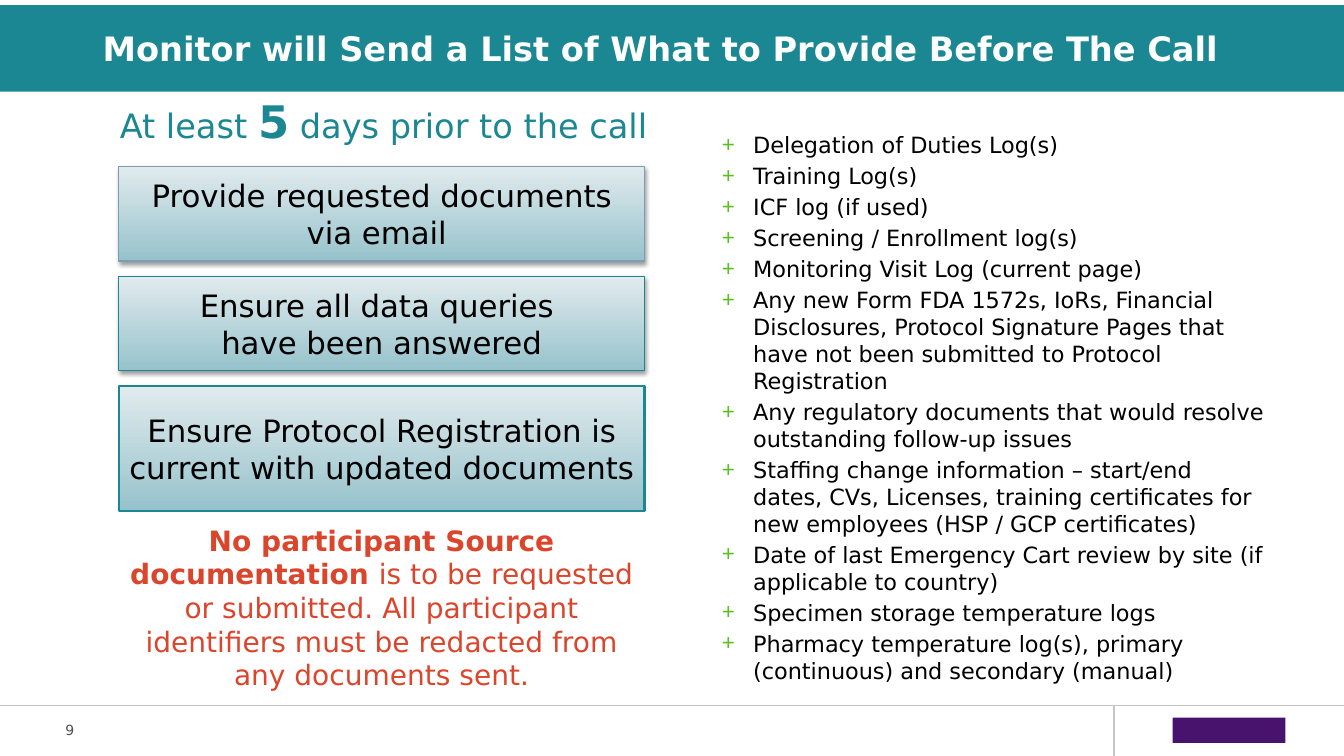
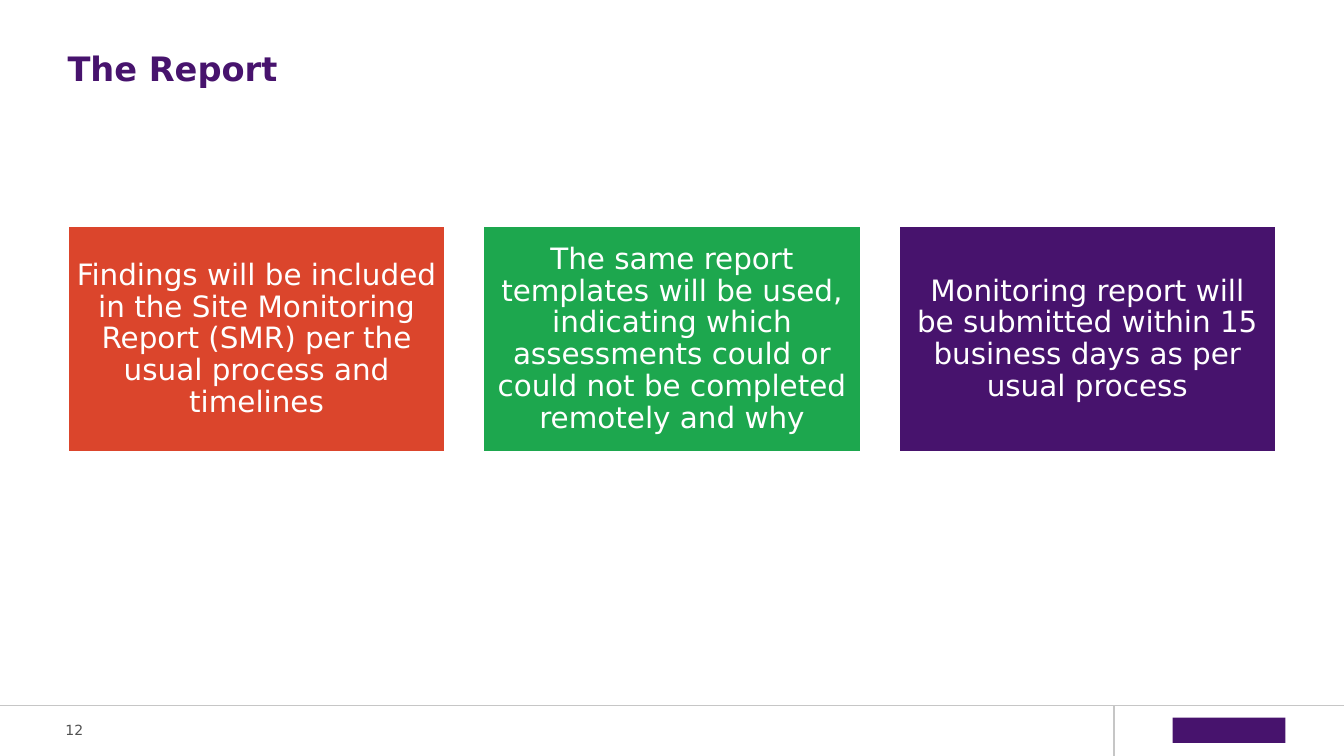
from dataclasses import dataclass

from lxml.etree import SubElement
from pptx import Presentation
from pptx.dml.color import RGBColor
from pptx.enum.shapes import MSO_CONNECTOR, MSO_SHAPE
from pptx.enum.text import MSO_ANCHOR, MSO_AUTO_SIZE, PP_ALIGN
from pptx.oxml.ns import qn
from pptx.util import Inches, Pt


@dataclass(frozen=True)
class Theme:
    font: str = "DejaVu Sans"
    teal: str = "1A8793"
    purple: str = "47136D"
    red: str = "DB452C"
    green: str = "1DA74E"
    bullet: str = "5BBF21"
    steel: str = "7C9EB3"
    dark: str = "96C2CB"
    light: str = "E1EBEE"
    rule: str = "C6C6C6"
    gray: str = "515151"
    black: str = "000000"
    white: str = "FFFFFF"
    title: int = 24
    big: int = 32
    step: int = 22
    card: int = 21
    note: int = 20
    body: int = 16
    page: int = 10


THEME = Theme()
WIDTH, HEIGHT = 13.33, 7.5
EDGE = 0.67
STEPS = [
    ("Provide requested documents via email ", 1.65, 0.94, THEME.steel, 0.75, True),
    ("Ensure all data queries \nhave been answered", 2.74, 0.94, THEME.teal, 0.75, True),
    ("Ensure Protocol Registration is current with updated documents",
     3.83, 1.24, THEME.teal, 2, False),
]
LOGS = [
    "Delegation of Duties Log(s)",
    "Training Log(s)",
    "ICF log (if used)",
    "Screening / Enrollment log(s)",
    "Monitoring Visit Log (current page)",
    "Any new Form FDA 1572s, IoRs, Financial Disclosures, Protocol Signature Pages "
    "that have not been submitted to Protocol Registration",
    "Any regulatory documents that would resolve outstanding follow-up issues",
    "Staffing change information – start/end dates, CVs, Licenses, training "
    "certificates for new employees (HSP / GCP certificates)",
    "Date of last Emergency Cart review by site (if applicable to country)",
    "Specimen storage temperature logs",
    "Pharmacy temperature log(s), primary (continuous) and secondary (manual)",
]
CARDS = [
    ("Findings will be included in the Site Monitoring Report (SMR) per the usual "
     "process and timelines", THEME.red),
    ("The same report templates will be used, indicating which assessments could or "
     "could not be completed remotely and why", THEME.green),
    ("Monitoring report will be submitted within 15 business days as per usual process",
     THEME.purple),
]


def rgb(color):
    return RGBColor.from_string(color)


def area(*sides):
    return [Inches(side) for side in sides]


def style(run, size, color, bold=False):
    run.font.name = THEME.font
    run.font.size = Pt(size)
    run.font.bold = bold
    run.font.color.rgb = rgb(color)


def setup(frame, inset=(0, 0, 0, 0), anchor=MSO_ANCHOR.MIDDLE):
    frame.word_wrap = True
    frame.auto_size = MSO_AUTO_SIZE.NONE
    frame.vertical_anchor = anchor
    (frame.margin_left, frame.margin_top,
     frame.margin_right, frame.margin_bottom) = area(*inset)


def write(frame, text, size, color, bold=False, align=PP_ALIGN.CENTER):
    frame.text = text
    for para in frame.paragraphs:
        para.alignment = align
        for run in para.runs:
            style(run, size, color, bold)


def blend(frame, parts, color):
    para = frame.paragraphs[0]
    para.alignment = PP_ALIGN.CENTER
    for text, size, bold in parts:
        run = para.add_run()
        run.text = text
        style(run, size, color, bold)


def block(slide, box, fill=None, line=None, weight=1):
    shape = slide.shapes.add_shape(MSO_SHAPE.RECTANGLE, *area(*box))
    shape.shadow.inherit = False
    if fill:
        shape.fill.solid()
        shape.fill.fore_color.rgb = rgb(fill)
    if line:
        shape.line.color.rgb = rgb(line)
        shape.line.width = Pt(weight)
    else:
        shape.line.fill.background()
    return shape


def shade(shape):
    shape.fill.gradient()
    shape.fill.gradient_angle = 90
    for stop, color in zip(shape.fill.gradient_stops, (THEME.dark, THEME.light)):
        stop.color.rgb = rgb(color)


def lift(shape):
    effects = shape._element.spPr.find(qn("a:effectLst"))
    shadow = SubElement(effects, qn("a:outerShdw"), blurRad=str(Pt(3.1)),
                        dist=str(Pt(1.6)), dir="5400000", rotWithShape="0")
    color = SubElement(shadow, qn("a:srgbClr"), val=THEME.black)
    SubElement(color, qn("a:alpha"), val="38000")


def rule(slide, *ends):
    line = slide.shapes.add_connector(MSO_CONNECTOR.STRAIGHT, *area(*ends))
    line.line.color.rgb = rgb(THEME.rule)
    line.line.width = Pt(1)
    SubElement(line._element.spPr, qn("a:effectLst"))


def footer(slide, number):
    block(slide, (11.63, 7.12, 1.12, 0.25), THEME.purple)
    rule(slide, 0, 7, WIDTH, 7)
    rule(slide, 11.05, 7, 11.05, HEIGHT)
    frame = slide.shapes.add_textbox(*area(0.65, 7.12, 0.57, 0.25)).text_frame
    setup(frame)
    write(frame, str(number), THEME.page, THEME.gray, align=PP_ALIGN.LEFT)


def place(holder, box):
    holder.left, holder.top, holder.width, holder.height = area(*box)


def title(slide, text, box, color, align, fill=None, inset=(0, 0, 0, 0)):
    holder = slide.shapes.title
    place(holder, box)
    if fill:
        holder.fill.solid()
        holder.fill.fore_color.rgb = rgb(fill)
    setup(holder.text_frame, inset)
    write(holder.text_frame, text, THEME.title, color, True, align)


def bullets(holder, items, box):
    place(holder, box)
    frame = holder.text_frame
    setup(frame, anchor=MSO_ANCHOR.TOP)
    frame.text = "\n".join(items)
    for index, para in enumerate(frame.paragraphs):
        para.level = 1
        para.space_before = Pt(3 if index else 0)
        props = para._p.get_or_add_pPr()
        props.set("marL", str(Inches(0.62)))
        props.set("indent", str(Inches(-0.31)))
        color = SubElement(props, qn("a:buClr"))
        SubElement(color, qn("a:srgbClr"), val=THEME.bullet)
        SubElement(props, qn("a:buChar"), char="+")
        for run in para.runs:
            style(run, THEME.body, THEME.black)


def before(deck):
    slide = deck.slides.add_slide(deck.slide_layouts[1])
    footer(slide, 9)
    title(slide, "Monitor will Send a List of What to Provide Before The Call",
          (0, 0.05, WIDTH, 0.86), THEME.white, PP_ALIGN.CENTER, THEME.teal,
          (0, 0, 0.23, 0))
    bullets(slide.placeholders[1], LOGS, (6.85, 1.3, 5.7, 5.6))

    lead = slide.shapes.add_textbox(*area(EDGE, 0.93, 6.27, 0.7)).text_frame
    setup(lead, anchor=MSO_ANCHOR.TOP)
    blend(lead, [("At least ", THEME.title, False), ("5", THEME.big, True),
                 (" days prior to the call", THEME.title, False)], THEME.teal)

    left, width, inset = 1.18, 5.21, (0.1, 0.05, 0.1, 0.05)
    for text, top, height, line, weight, raised in STEPS:
        step = block(slide, (left, top, width, height), line=line, weight=weight)
        shade(step)
        if raised:
            lift(step)
        setup(step.text_frame, inset)
        write(step.text_frame, text, THEME.step, THEME.black)

    note = block(slide, (left, 5.22, width, 1.61), THEME.white).text_frame
    setup(note, inset)
    blend(note, [("No participant Source documentation ", THEME.note, True),
                 ("is to be requested or submitted. All participant identifiers "
                  "must be redacted from any documents sent.", THEME.note, False)],
          THEME.red)


def report(deck):
    slide = deck.slides.add_slide(deck.slide_layouts[5])
    footer(slide, 12)
    title(slide, "The Report", (EDGE, 0.25, 12, 0.86), THEME.purple, PP_ALIGN.LEFT)
    width = 3.75
    pitch = (WIDTH - 2 * EDGE - width) / (len(CARDS) - 1)
    for index, (text, fill) in enumerate(CARDS):
        box = (EDGE + index * pitch, 2.24, width, 2.25)
        frame = block(slide, box, fill, THEME.white, 2).text_frame
        setup(frame, (0.09,) * 4)
        write(frame, text, THEME.card, THEME.white)
        frame.paragraphs[0].line_spacing = 0.9


def main():
    deck = Presentation()
    deck.slide_width, deck.slide_height = area(WIDTH, HEIGHT)
    before(deck)
    report(deck)
    deck.save("out.pptx")


if __name__ == "__main__":
    main()
